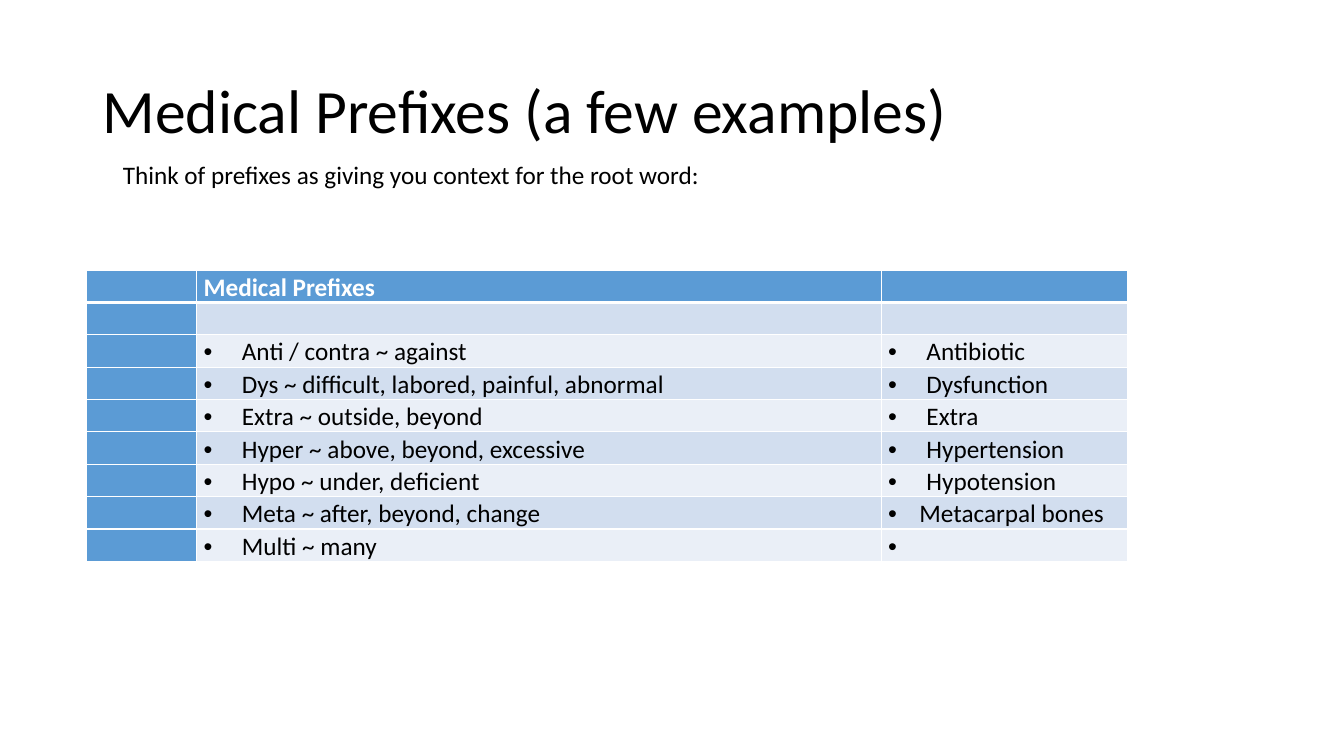
from lxml import etree
from pptx import Presentation
from pptx.dml.color import RGBColor
from pptx.enum.text import MSO_ANCHOR
from pptx.oxml.ns import qn
from pptx.util import Inches, Pt

MIDDLE = MSO_ANCHOR.MIDDLE
TOP = MSO_ANCHOR.TOP
BLANK_LAYOUT = 6

COLORS = {
    "black": "000000",
    "white": "FFFFFF",
    "blue": "5B9BD5",
    "dark_band": "D2DEEF",
    "light_band": "EAEFF7",
}

COLUMN_WIDTHS = (1.09, 6.79, 2.44)
ROW_HEIGHT = 0.32
BULLET_INDENT = 0.38
NARROW_INDENT = 0.31

PREFIXES = [
    ("Anti / contra ~ against", "Antibiotic"),
    ("Dys ~ difficult, labored, painful, abnormal", "Dysfunction"),
    ("Extra ~ outside, beyond", "Extra"),
    ("Hyper ~ above, beyond, excessive", "Hypertension"),
    ("Hypo ~ under, deficient", "Hypotension"),
    ("Meta ~ after, beyond, change", "Metacarpal bones"),
    ("Multi ~ many", " "),
]


class SlideBuilder:
    font_name = "Calibri"
    body_size = 18
    body_spacing = 1.07

    def __init__(self, slide):
        self.slide = slide

    def color(self, name):
        return RGBColor.from_string(COLORS[name])

    def style(self, paragraph, size, spacing, color="black", bold=False):
        paragraph.line_spacing = spacing
        font = paragraph.font
        font.name = self.font_name
        font.size = Pt(size)
        font.bold = bold
        font.color.rgb = self.color(color)

    def text(self, text, left, top, width, height, size, spacing, anchor=TOP, wrap=True):
        shape = self.slide.shapes.add_textbox(
            Inches(left), Inches(top), Inches(width), Inches(height))
        frame = shape.text_frame
        frame.word_wrap = wrap
        frame.vertical_anchor = anchor
        paragraph = frame.paragraphs[0]
        paragraph.text = text
        self.style(paragraph, size, spacing)

    def bullet(self, paragraph, indent):
        properties = paragraph._p.get_or_add_pPr()
        properties.set("marL", str(Inches(indent)))
        properties.set("indent", str(-Inches(indent)))
        etree.SubElement(properties, qn("a:buFont"), typeface="Arial")
        etree.SubElement(properties, qn("a:buChar"), char="•")

    def borders(self, cell, top, bottom):
        properties = cell._tc.get_or_add_tcPr()
        widths = {"a:lnL": 1, "a:lnR": 1, "a:lnT": top, "a:lnB": bottom}
        for position, (side, width) in enumerate(widths.items()):
            line = etree.Element(qn(side), w=str(Pt(width)))
            fill = etree.SubElement(line, qn("a:solidFill"))
            etree.SubElement(fill, qn("a:srgbClr"), val=COLORS["white"])
            properties.insert(position, line)

    def cell(self, cell, text, fill, color="black", bold=False, indent=None, top=1, bottom=1):
        cell.margin_left = cell.margin_right = Inches(0.07)
        cell.margin_top = cell.margin_bottom = 0
        cell.fill.solid()
        cell.fill.fore_color.rgb = self.color(fill)
        self.borders(cell, top, bottom)
        paragraph = cell.text_frame.paragraphs[0]
        paragraph.text = text
        if indent:
            self.bullet(paragraph, indent)
        self.style(paragraph, self.body_size, self.body_spacing, color, bold)

    def prefix_table(self, left, top):
        rows = [("Medical Prefixes", ""), ("", "")] + PREFIXES
        table = self.slide.shapes.add_table(
            len(rows), len(COLUMN_WIDTHS), Inches(left), Inches(top),
            Inches(sum(COLUMN_WIDTHS)), Inches(ROW_HEIGHT * len(rows))).table
        table.first_row = table.horz_banding = False
        for column, width in zip(table.columns, COLUMN_WIDTHS):
            column.width = Inches(width)
        for row_index, texts in enumerate(rows):
            table.rows[row_index].height = Inches(ROW_HEIGHT)
            header = row_index == 0
            band = "dark_band" if row_index % 2 else "light_band"
            for column_index, text in enumerate(("",) + texts):
                indent = NARROW_INDENT if text == "Metacarpal bones" else BULLET_INDENT
                self.cell(
                    table.cell(row_index, column_index), text,
                    fill="blue" if header or column_index == 0 else band,
                    color="white" if header else "black",
                    bold=header,
                    indent=indent if text and not header else None,
                    top=3 if row_index == 1 else 1,
                    bottom=3 if header else 1)


def main():
    presentation = Presentation()
    presentation.slide_width = Inches(13.33)
    presentation.slide_height = Inches(7.5)
    slide = presentation.slides.add_slide(presentation.slide_layouts[BLANK_LAYOUT])
    builder = SlideBuilder(slide)
    builder.text("Medical Prefixes (a few examples)",
                 0.92, 0.4, 11.5, 1.45, size=44, spacing=0.9, anchor=MIDDLE)
    builder.prefix_table(0.86, 2.68)
    builder.text("Think of prefixes as giving you context for the root word:",
                 1.12, 1.51, 5.99, 0.43, size=18, spacing=1.07, wrap=False)
    presentation.save("out.pptx")


if __name__ == "__main__":
    main()
